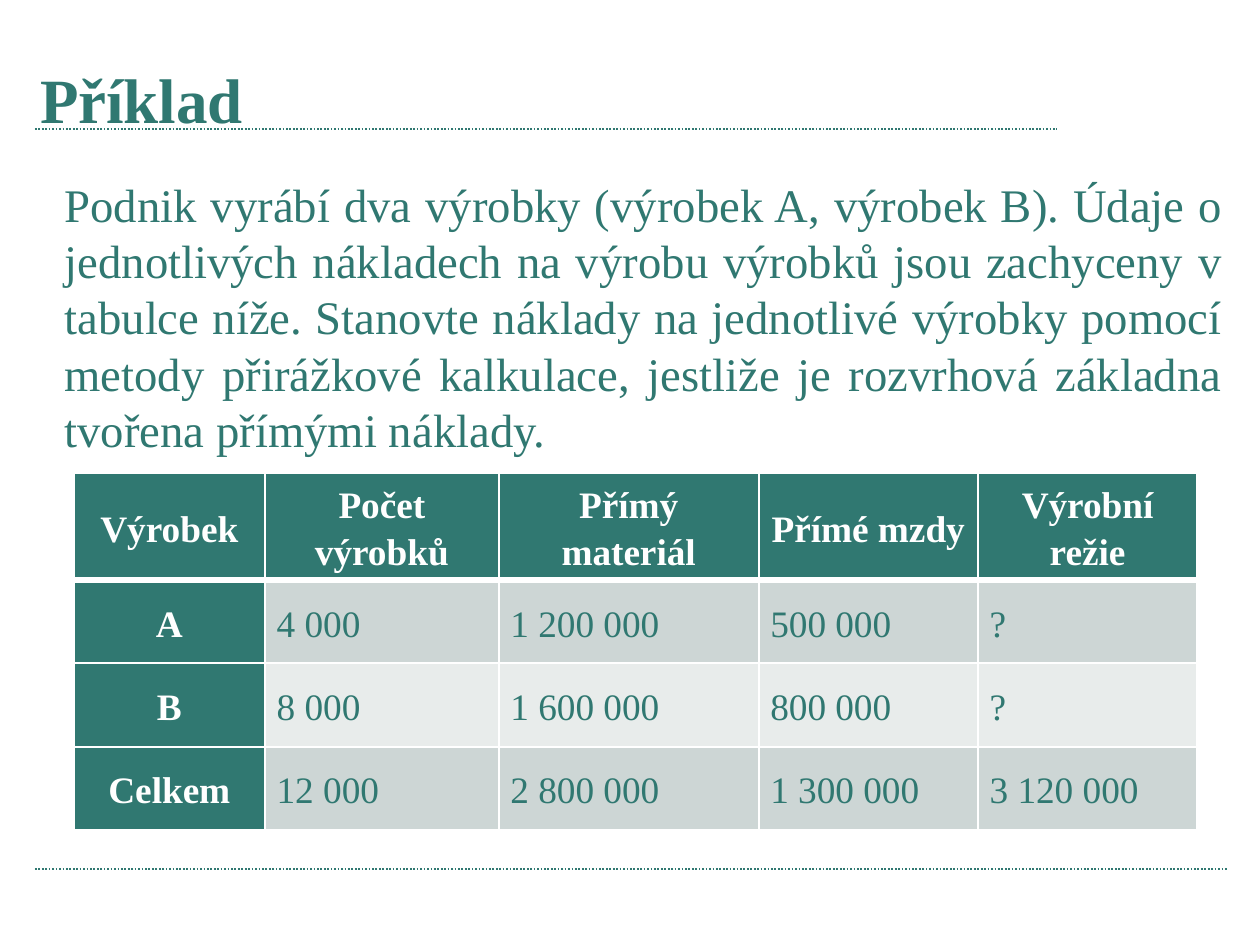
from pptx import Presentation
from pptx.dml.color import RGBColor
from pptx.enum.dml import MSO_LINE
from pptx.enum.shapes import MSO_CONNECTOR
from pptx.enum.text import MSO_ANCHOR as Anchor, PP_ALIGN as Align
from pptx.oxml import parse_xml
from pptx.oxml.ns import nsdecls
from pptx.util import Pt
from lxml.etree import SubElement

TEAL = RGBColor(0x30, 0x78, 0x71)
WHITE = RGBColor(0xFF, 0xFF, 0xFF)
BAND_DARK = RGBColor(0xCD, 0xD6, 0xD5)
BAND_LIGHT = RGBColor(0xE8, 0xEC, 0xEB)
FONT = "Times New Roman"

TASK = (
    "Podnik vyrábí dva výrobky (výrobek A, výrobek B). Údaje o jednotlivých "
    "nákladech na výrobu výrobků jsou zachyceny v tabulce níže. Stanovte náklady "
    "na jednotlivé výrobky pomocí metody přirážkové kalkulace, jestliže je "
    "rozvrhová základna tvořena přímými náklady."
)
COSTS = [
    ["Výrobek", "Počet výrobků", "Přímý materiál", "Přímé mzdy", "Výrobní režie"],
    ["A", "4 000", "1 200 000", "500 000", "?"],
    ["B", "8 000", "1 600 000", "800 000", "?"],
    ["Celkem", "12 000", "2 800 000", "1 300 000", "3 120 000"],
]
COLUMN_WIDTHS = [82, 100.2, 111.4, 94, 94]
ROW_HEIGHTS = [46, 35.7, 35.7, 35.7]


def apply_format(target, values):
    for name, value in values.items():
        setattr(target, name, value)


def write_text(frame, text, size, color, bold=False, **para_format):
    para = frame.paragraphs[0]
    span = para.add_run()
    span.text = text
    apply_format(para, para_format)
    apply_format(span.font, {"name": FONT, "size": Pt(size), "bold": bold})
    span.font.color.rgb = color


def add_dotted_rule(slide, left, top, width):
    rule = slide.shapes.add_connector(
        MSO_CONNECTOR.STRAIGHT, Pt(left), Pt(top), Pt(left + width), Pt(top))
    apply_format(rule.line, {"width": Pt(0.75), "dash_style": MSO_LINE.ROUND_DOT})
    rule.line.color.rgb = TEAL
    properties = rule.line._get_or_add_ln().getparent()
    SubElement(properties, "{http://schemas.openxmlformats.org/drawingml/2006/main}effectLst")


def place_title(slide, left, top, width, height):
    title = slide.shapes.title
    apply_format(title, {"left": Pt(left), "top": Pt(top),
                         "width": Pt(width), "height": Pt(height)})
    title.text_frame.vertical_anchor = Anchor.MIDDLE
    write_text(title.text_frame, "Příklad", 27, TEAL, bold=True, alignment=Align.LEFT)


def add_task(slide, left, top, width, height):
    box = slide.shapes.add_textbox(Pt(left), Pt(top), Pt(width), Pt(height))
    box.text_frame.word_wrap = True
    write_text(box.text_frame, TASK, 20, TEAL,
               alignment=Align.JUSTIFY, line_spacing=Pt(24))


def set_borders(cell, widths):
    """Draw white borders; widths maps the sides L, R, T, B to points, in that order."""
    properties = cell._tc.get_or_add_tcPr()
    for index, (side, width) in enumerate(widths.items()):
        properties.insert(index, parse_xml(
            f'<a:ln{side} {nsdecls("a")} w="{Pt(width)}"><a:solidFill>'
            f'<a:srgbClr val="{WHITE}"/></a:solidFill></a:ln{side}>'))


def format_cell(cell, text, row, column):
    is_heading = row == 0 or column == 0
    apply_format(cell, {"margin_left": Pt(5), "margin_right": Pt(5), "margin_top": 0,
                        "margin_bottom": 0, "vertical_anchor": Anchor.MIDDLE})
    band = BAND_DARK if row % 2 else BAND_LIGHT
    cell.fill.solid()
    cell.fill.fore_color.rgb = TEAL if is_heading else band
    set_borders(cell, {"L": 1, "R": 1, "T": 3 if row == 1 else 1, "B": 3 if row == 0 else 1})
    write_text(cell.text_frame, text, 16, WHITE if is_heading else TEAL, bold=is_heading,
               alignment=Align.CENTER if is_heading else Align.LEFT, line_spacing=1.15)


def add_cost_table(slide, left, top):
    table = slide.shapes.add_table(
        len(COSTS), len(COLUMN_WIDTHS), Pt(left), Pt(top),
        Pt(sum(COLUMN_WIDTHS)), Pt(sum(ROW_HEIGHTS))).table
    table.horz_banding = False
    for column, width in zip(table.columns, COLUMN_WIDTHS):
        column.width = Pt(width)
    for row, height in zip(table.rows, ROW_HEIGHTS):
        row.height = Pt(height)
    for row, texts in enumerate(COSTS):
        for column, text in enumerate(texts):
            format_cell(table.cell(row, column), text, row, column)


def build_example_slide(deck):
    slide = deck.slides.add_slide(deck.slide_layouts.get_by_name("Title Only"))
    add_dotted_rule(slide, 15, 55.2, 438)
    add_dotted_rule(slide, 15, 372.4, 511)
    place_title(slide, 10, 21, 476, 42.5)
    add_task(slide, 20.6, 72, 510.5, 143)
    add_cost_table(slide, 31.6, 202.6)


def main():
    deck = Presentation()
    apply_format(deck, {"slide_width": Pt(540), "slide_height": Pt(405)})
    build_example_slide(deck)
    deck.save("out.pptx")


if __name__ == "__main__":
    main()
